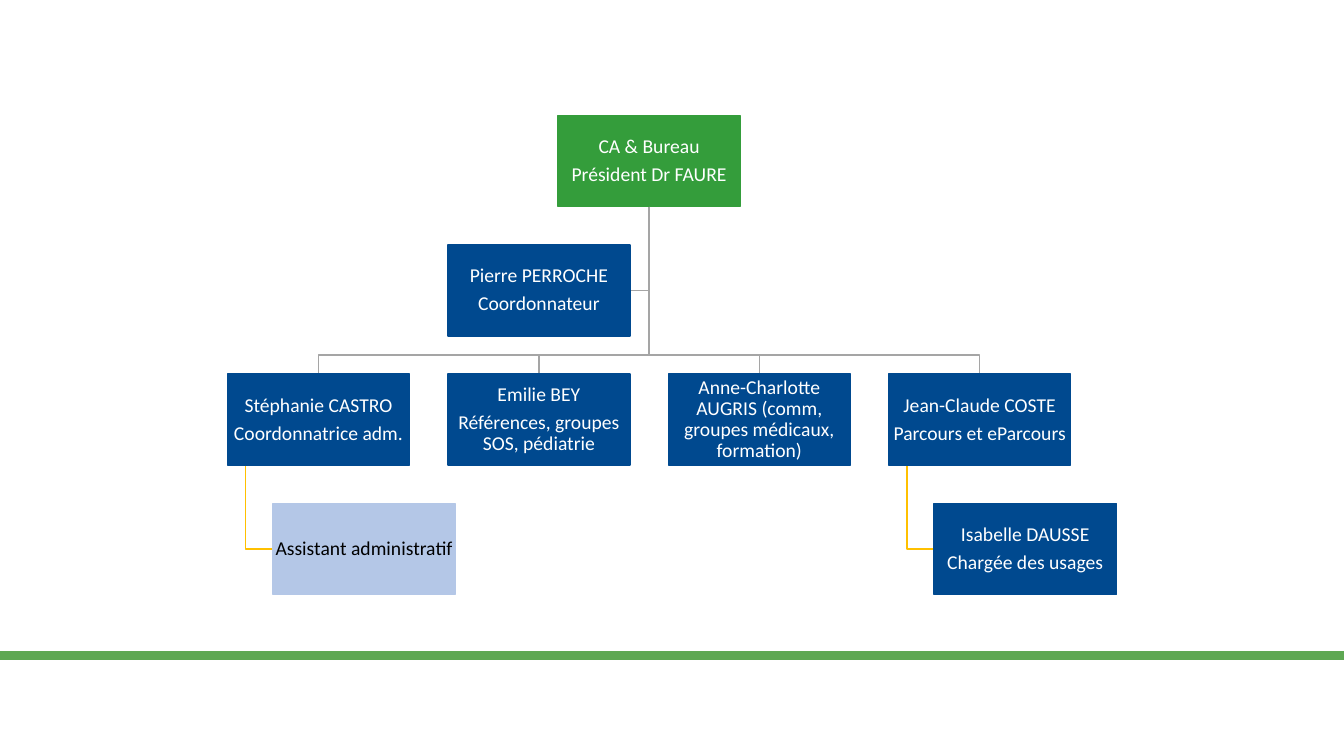
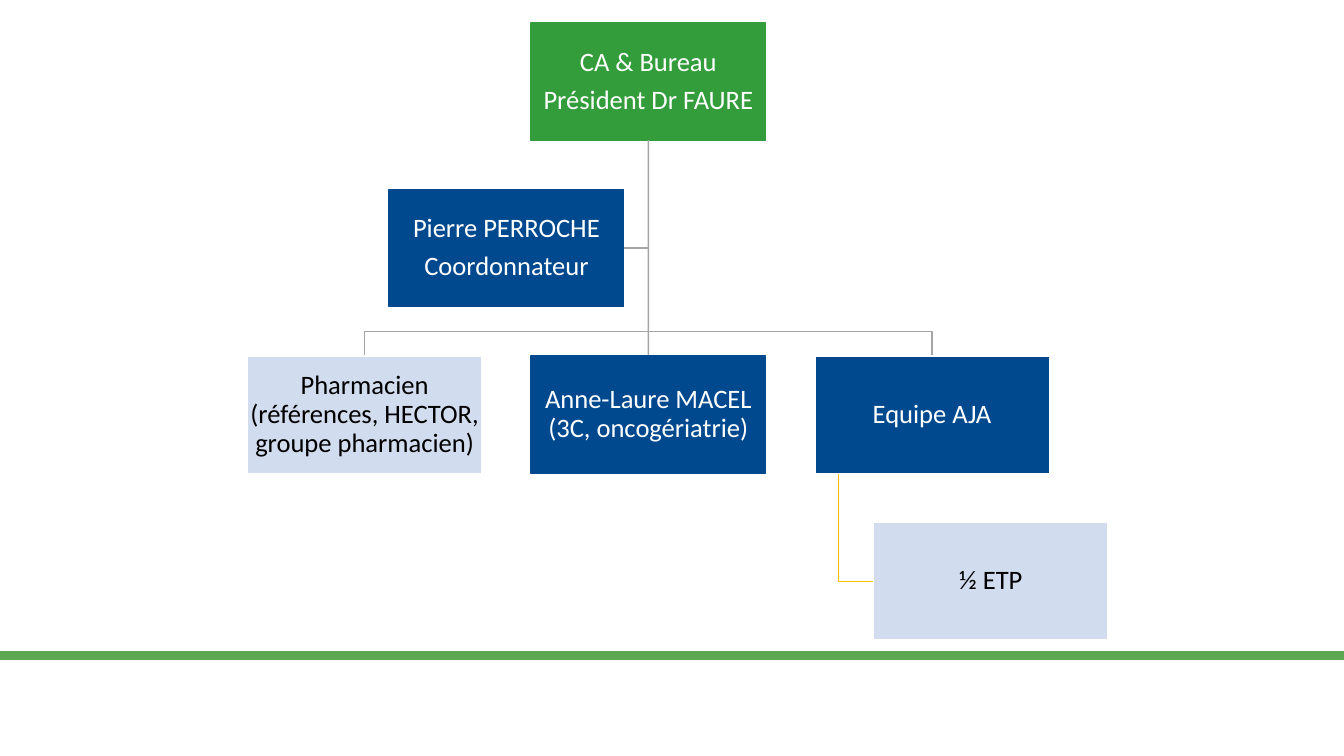
from lxml import etree
from pptx import Presentation
from pptx.dml.color import RGBColor
from pptx.enum.shapes import MSO_CONNECTOR, MSO_SHAPE
from pptx.enum.text import MSO_ANCHOR, PP_ALIGN
from pptx.oxml.ns import qn
from pptx.util import Cm, Pt

WHITE = RGBColor(0xFF, 0xFF, 0xFF)
BLACK = RGBColor(0x00, 0x00, 0x00)
GREEN = RGBColor(0x34, 0x9D, 0x3B)
BAND_GREEN = RGBColor(0x5E, 0xA8, 0x53)
BLUE = RGBColor(0x00, 0x49, 0x8F)
LIGHT_BLUE = RGBColor(0xB4, 0xC7, 0xE7)
PALE_BLUE = RGBColor(0xD1, 0xDC, 0xEE)
GREY = RGBColor(0xA5, 0xA5, 0xA5)
YELLOW = RGBColor(0xFF, 0xC0, 0x00)
FONT = "Calibri"

# Box styles: fill, outline, text
HEAD = (GREEN, GREEN, WHITE)
STAFF = (BLUE, BLUE, WHITE)
TEAM = (BLUE, WHITE, WHITE)
OPEN_POST = (LIGHT_BLUE, LIGHT_BLUE, BLACK)
NEW_POST = (PALE_BLUE, WHITE, BLACK)

# Proportions of the chart, as fractions of a box width
HEIGHT, GAP, INDENT, STEM = 0.5, 0.21, 0.25, 0.1

PRESIDENT = ["CA & Bureau", "Président Dr FAURE"]
COORDINATOR = ["Pierre PERROCHE", "Coordonnateur"]

# Lengths in cm; each member is (lines, style, subordinate or None)
CHARTS = [
    {"centre": 16.36, "top": 2.91, "width": 4.59, "size": 14, "members": [
        (["Stéphanie CASTRO", "Coordonnatrice adm."], STAFF,
         (["Assistant administratif"], OPEN_POST)),
        (["Emilie BEY", "Références, groupes SOS, pédiatrie"], STAFF, None),
        (["Anne-Charlotte AUGRIS (comm, groupes médicaux, formation)"],
         STAFF, None),
        (["Jean-Claude COSTE", "Parcours et eParcours"], STAFF,
         (["Isabelle DAUSSE", "Chargée des usages"], STAFF)),
    ]},
    {"centre": 16.34, "top": 0.58, "width": 5.91, "size": 19, "members": [
        (["Pharmacien (références, HECTOR, groupe pharmacien)"],
         NEW_POST, None),
        (["Anne-Laure MACEL (3C, oncogériatrie)"], STAFF, None),
        (["Equipe AJA"], TEAM, (["½ ETP"], NEW_POST)),
    ]},
]


def add_line(s, points, colour=GREY, weight=1):
    """Draw a connector between two points, or an open path through more."""
    points = [(Cm(x), Cm(y)) for x, y in points]
    if len(points) == 2:
        line = s.shapes.add_connector(
            MSO_CONNECTOR.STRAIGHT, *points[0], *points[1])
        etree.SubElement(line.element.spPr, qn("a:effectLst"))
    else:
        builder = s.shapes.build_freeform(*points[0])
        builder.add_line_segments(points[1:], close=False)
        line = builder.convert_to_shape()
        line.shadow.inherit = False
        line.fill.background()
    line.line.color.rgb = colour
    line.line.width = Pt(weight)
    return line


def add_box(s, left, top, width, lines, style, size):
    fill, outline, text = style
    sp = s.shapes.add_shape(MSO_SHAPE.RECTANGLE, Cm(left), Cm(top),
                            Cm(width), Cm(HEIGHT * width))
    sp.shadow.inherit = False
    sp.fill.solid()
    sp.fill.fore_color.rgb = fill
    sp.line.color.rgb = outline
    sp.line.width = Pt(1)
    tf = sp.text_frame
    tf.word_wrap = True
    tf.vertical_anchor = MSO_ANCHOR.MIDDLE
    for side in ("left", "top", "right", "bottom"):
        setattr(tf, f"margin_{side}", Cm(0.02))
    tf.text = "\n".join(lines)
    for p in tf.paragraphs:
        p.alignment = PP_ALIGN.CENTER
        p.line_spacing = 0.9
        p.space_after = Pt(0.35 * size)
        for name, value in {"name": FONT, "size": Pt(size)}.items():
            setattr(p.font, name, value)
        p.font.color.rgb = text


prs = Presentation()
prs.slide_width, prs.slide_height = Cm(33.87), Cm(19.05)
blank = prs.slide_layouts[6]

for number, chart in enumerate(CHARTS):
    s = prs.slides.add_slide(blank)
    if number == 0:
        # The master holds the band, so every slide shows it
        band = add_line(s, [(0, 16.52), (33.87, 16.52)], BAND_GREEN, 7)
        prs.slide_master.shapes.element.append(band.element)

    centre, width, size = chart["centre"], chart["width"], chart["size"]
    members = chart["members"]
    height, gap = HEIGHT * width, GAP * width
    rows = [chart["top"] + i * (height + gap) for i in range(4)]
    first_left = centre - (len(members) * (width + gap) - gap) / 2
    lefts = [first_left + i * (width + gap) for i in range(len(members))]
    trunk = (centre, rows[0] + height)
    bus = rows[2] - gap / 2
    coordinator_right = centre - gap / 2
    coordinator_middle = rows[1] + height / 2

    add_line(s, [trunk, (centre, coordinator_middle),
                 (coordinator_right, coordinator_middle)])
    add_box(s, centre - width / 2, rows[0], width, PRESIDENT, HEAD, size)
    add_box(s, coordinator_right - width, rows[1], width, COORDINATOR,
            STAFF, size)

    for left, (lines, style, subordinate) in zip(lefts, members):
        middle = left + width / 2
        is_central = abs(middle - centre) < 0.01
        bends = [] if is_central else [(centre, bus), (middle, bus)]
        add_line(s, [trunk, *bends, (middle, rows[2])])
        if subordinate:
            stem, indent = left + STEM * width, left + INDENT * width
            level = rows[3] + height / 2
            add_line(s, [(stem, rows[2] + height), (stem, level),
                         (indent, level)], YELLOW)
            add_box(s, indent, rows[3], width, *subordinate, size)
        add_box(s, left, rows[2], width, lines, style, size)

prs.save("out.pptx")
